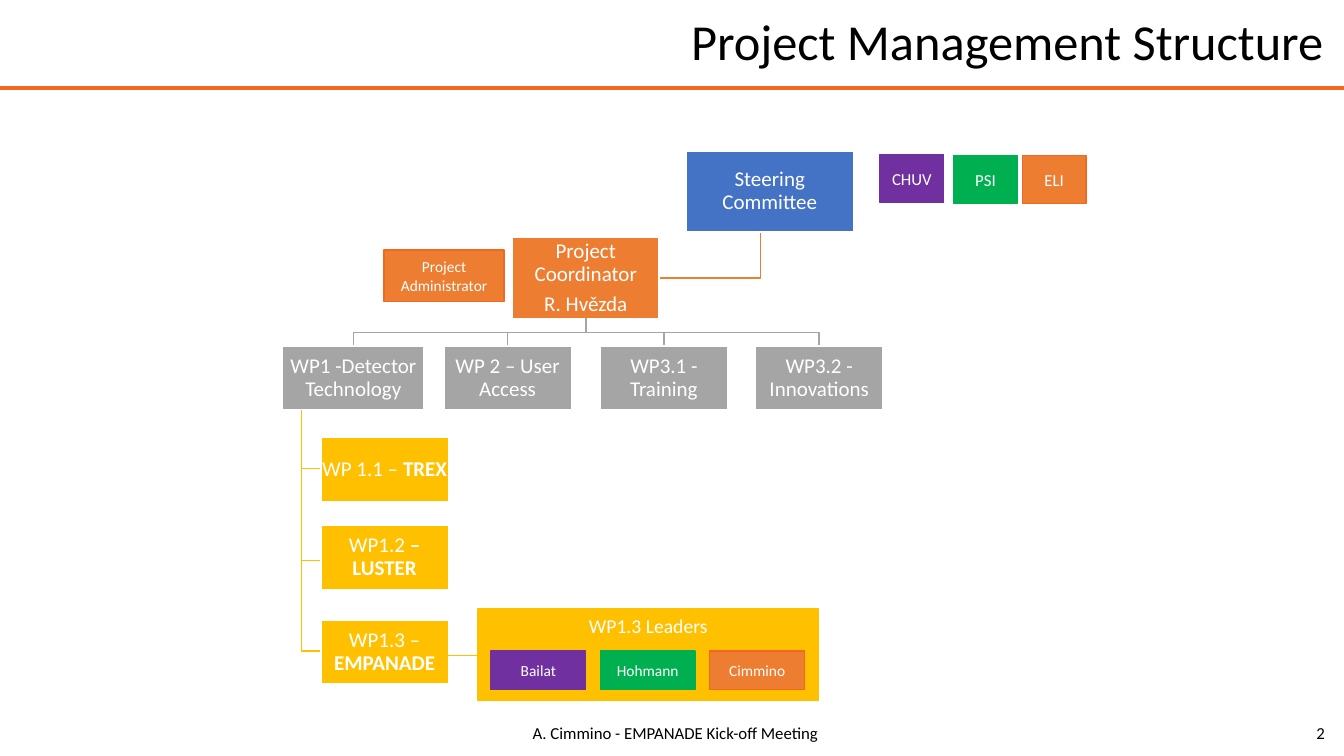
from lxml import etree
from pptx import Presentation
from pptx import util as u
from pptx.dml import color
from pptx.enum import shapes, text
from pptx.oxml import ns

FONT = "Calibri"
WHITE, BLACK = "FFFFFF", "000000"
BLUE, ORANGE, GRAY, YELLOW = "4472C4", "ED7D31", "A5A5A5", "FFC000"
PURPLE, GREEN, RULE_ORANGE = "7030A0", "00B050", "F26722"
CENTER, RIGHT = text.PP_ALIGN.CENTER, text.PP_ALIGN.RIGHT
NODE_INSET = 0.01
PACKAGE_TOP, NODE_HEIGHT, NODE_WIDTH = 3.43, 0.64, 1.27


def rgb(hex_code):
    return color.RGBColor.from_string(hex_code)


def style_runs(paragraph, size, hex_code, align):
    paragraph.alignment = align
    for run in paragraph.runs:
        run.font.size = u.Pt(size)
        run.font.name = FONT
        run.font.color.rgb = rgb(hex_code)


def add_box(slide, bounds, fill, outline, width=1):
    box = slide.shapes.add_shape(shapes.MSO_SHAPE.RECTANGLE, *map(u.Inches, bounds))
    box.shadow.inherit = False
    box.fill.solid()
    box.fill.fore_color.rgb = rgb(fill)
    box.line.color.rgb = rgb(outline)
    box.line.width = u.Pt(width)
    return box


def add_node(slide, bounds, fill, label, bold_part=""):
    frame = add_box(slide, bounds, fill, WHITE, 1.5).text_frame
    frame.margin_left = frame.margin_right = u.Inches(NODE_INSET)
    frame.margin_top = frame.margin_bottom = u.Inches(NODE_INSET)
    frame.vertical_anchor = text.MSO_ANCHOR.MIDDLE
    frame.text = label
    if bold_part:
        bold_run = frame.paragraphs[0].add_run()
        bold_run.text = bold_part
        bold_run.font.bold = True
    for paragraph in frame.paragraphs:
        style_runs(paragraph, 15, WHITE, CENTER)
        paragraph.line_spacing = 0.9
        paragraph.space_after = u.Pt(5.25)


def add_tag(slide, bounds, fill, label, size):
    outline = RULE_ORANGE if fill == ORANGE else fill
    frame = add_box(slide, bounds, fill, outline).text_frame
    frame.vertical_anchor = text.MSO_ANCHOR.MIDDLE
    frame.text = label
    style_runs(frame.paragraphs[0], size, WHITE, CENTER)


def add_label(slide, bounds, label, size, hex_code, align):
    frame = slide.shapes.add_textbox(*map(u.Inches, bounds)).text_frame
    frame.word_wrap = True
    frame.text = label
    style_runs(frame.paragraphs[0], size, hex_code, align)


def add_rule(slide, start, end, hex_code, width):
    rule = slide.shapes.add_connector(
        shapes.MSO_CONNECTOR.STRAIGHT, *map(u.Inches, start + end))
    rule.line.color.rgb = rgb(hex_code)
    rule.line.width = u.Pt(width)
    etree.SubElement(rule.element.spPr, ns.qn("a:effectLst"))


def add_branch(slide, points, hex_code):
    corners = [(u.Inches(x), u.Inches(y)) for x, y in points]
    builder = slide.shapes.build_freeform(*corners[0])
    builder.add_line_segments(corners[1:], close=False)
    branch = builder.convert_to_shape()
    branch.shadow.inherit = False
    branch.fill.background()
    branch.line.color.rgb = rgb(hex_code)
    branch.line.width = u.Pt(1)


def set_title(slide, label):
    title = slide.shapes.title
    title.left, title.top = u.Inches(1.64), u.Inches(0.09)
    title.width, title.height = u.Inches(11.59), u.Inches(0.69)
    frame = title.text_frame
    frame.text = label
    frame.vertical_anchor = text.MSO_ANCHOR.MIDDLE
    frame.auto_size = text.MSO_AUTO_SIZE.NONE
    style_runs(frame.paragraphs[0], 36, BLACK, RIGHT)
    frame.paragraphs[0].line_spacing = 0.9


def add_management(slide):
    add_branch(slide, [(7.54, 2.08), (7.54, 2.76), (6.54, 2.76)], ORANGE)
    add_node(slide, (6.8, 1.5, 1.67, 0.8), BLUE, "Steering Committee")
    add_node(slide, (5.08, 2.35, 1.46, 0.82), ORANGE, "Project Coordinator\nR. Hvězda")
    add_tag(slide, (3.81, 2.48, 1.19, 0.51), ORANGE, "Project Administrator", 11)
    partners = [(8.73, 1.53, PURPLE, "CHUV"), (9.46, 1.54, GREEN, "PSI"),
                (10.14, 1.54, ORANGE, "ELI")]
    for left, top, fill, partner in partners:
        add_tag(slide, (left, top, 0.63, 0.48), fill, partner, 12)


def add_work_packages(slide):
    packages = [(2.8, 1.41, "WP1 -Detector Technology"),
                (4.4, NODE_WIDTH, "WP 2 – User Access"),
                (5.95, NODE_WIDTH, "WP3.1 - Training"),
                (7.49, NODE_WIDTH, "WP3.2 - Innovations")]
    for left, width, package in packages:
        center = left + width / 2
        add_branch(slide, [(5.81, 3.16), (5.81, 3.3), (center, 3.3),
                           (center, PACKAGE_TOP)], GRAY)
        add_node(slide, (left, PACKAGE_TOP, width, NODE_HEIGHT), GRAY, package)


def add_detector_tasks(slide):
    tasks = [(4.34, 4.65, "WP 1.1 – ", "TREX"),
             (5.21, 5.56, "WP1.2 ", "– LUSTER"),
             (6.15, 6.46, "WP1.3 – ", "EMPANADE")]
    for top, branch_y, code, task in tasks:
        add_branch(slide, [(2.99, 4.07), (2.99, branch_y), (3.18, branch_y)], YELLOW)
        add_node(slide, (3.18, top, NODE_WIDTH, NODE_HEIGHT), YELLOW, code, task)


def add_leaders(slide):
    add_box(slide, (4.74, 6.04, 3.38, 0.91), YELLOW, YELLOW)
    add_label(slide, (4.74, 6.04, 3.38, 0.34), "WP1.3 Leaders", 14, WHITE, CENTER)
    leaders = [(PURPLE, "Bailat"), (GREEN, "Hohmann"), (ORANGE, "Cimmino")]
    for index, (fill, leader) in enumerate(leaders):
        add_tag(slide, (4.87 + index * 1.085, 6.46, 0.94, 0.38), fill, leader, 11)
    add_rule(slide, (4.44, 6.5), (4.73, 6.5), YELLOW, 0.5)


def main():
    deck = Presentation()
    deck.slide_width, deck.slide_height = u.Inches(13.33), u.Inches(7.5)
    slide = deck.slides.add_slide(deck.slide_layouts[5])
    set_title(slide, "Project Management Structure")
    add_rule(slide, (0, 0.87), (13.33, 0.87), RULE_ORANGE, 3)
    add_management(slide)
    add_work_packages(slide)
    add_detector_tasks(slide)
    add_leaders(slide)
    add_label(slide, (4.45, 7.12, 4.5, 0.29),
              "A. Cimmino - EMPANADE Kick-off Meeting", 12, BLACK, CENTER)
    add_label(slide, (10.24, 7.12, 3, 0.29), "2", 12, BLACK, RIGHT)
    deck.save("out.pptx")


if __name__ == "__main__":
    main()
